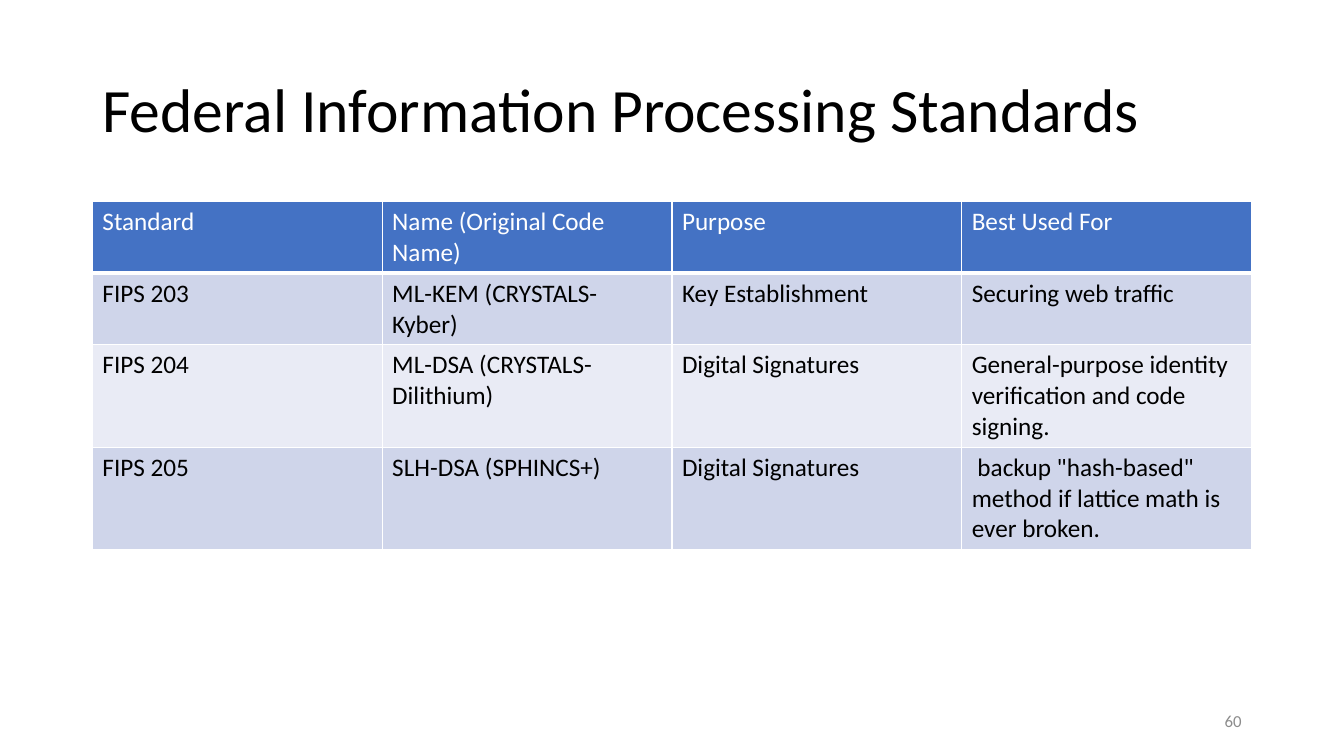
from lxml import etree
from pptx import Presentation
from pptx.dml.color import RGBColor
from pptx.enum.text import MSO_ANCHOR, MSO_AUTO_SIZE, PP_ALIGN
from pptx.oxml.ns import qn
from pptx.util import Pt

PX = 9525
WHITE = RGBColor(0xFF, 0xFF, 0xFF)
BLACK = RGBColor(0x00, 0x00, 0x00)
GRAY = RGBColor(0x8C, 0x8C, 0x8C)
HEADER_BLUE = RGBColor(0x44, 0x72, 0xC4)
BAND_DARK = RGBColor(0xCF, 0xD5, 0xEA)
BAND_LIGHT = RGBColor(0xE9, 0xEB, 0xF5)
LEFT, RIGHT = PP_ALIGN.LEFT, PP_ALIGN.RIGHT
MIDDLE, TOP = MSO_ANCHOR.MIDDLE, MSO_ANCHOR.TOP
NO_AUTOFIT = MSO_AUTO_SIZE.NONE

ROW_HEIGHT = 39
STANDARDS = [
    ["Standard", "Name (Original Code Name)", "Purpose", "Best Used For"],
    ["FIPS 203", "ML-KEM (CRYSTALS-Kyber)", "Key Establishment", "Securing web traffic"],
    ["FIPS 204", "ML-DSA (CRYSTALS-Dilithium)", "Digital Signatures",
     "General-purpose identity verification and code signing."],
    ["FIPS 205", "SLH-DSA (SPHINCS+)", "Digital Signatures",
     ' backup "hash-based" method if lattice math is ever broken.'],
]


def write_text(text_frame, text, size=18, color=BLACK, align=LEFT, anchor=TOP, line_spacing=1.0):
    text_frame.word_wrap = True
    text_frame.vertical_anchor = anchor
    paragraph = text_frame.paragraphs[0]
    paragraph.alignment = align
    paragraph.line_spacing = line_spacing
    run = paragraph.add_run()
    run.text = text
    run.font.name = "Calibri"
    run.font.size = Pt(size)
    run.font.bold = False
    run.font.color.rgb = color


def add_borders(cell, bottom_width):
    properties = cell._tc.get_or_add_tcPr()
    widths = {"a:lnL": 1, "a:lnR": 1, "a:lnT": 1, "a:lnB": bottom_width}
    for position, (tag, width) in enumerate(widths.items()):
        line = etree.Element(qn(tag), w=str(Pt(width)))
        fill = etree.SubElement(line, qn("a:solidFill"))
        etree.SubElement(fill, qn("a:srgbClr"), val=str(WHITE))
        properties.insert(position, line)


def place_title(slide, left, top, width, height):
    title = slide.shapes.title
    title.left, title.top = left * PX, top * PX
    title.width, title.height = width * PX, height * PX
    title.text_frame.auto_size = NO_AUTOFIT
    write_text(title.text_frame, "Federal Information Processing Standards",
               size=44, anchor=MIDDLE, line_spacing=0.9)


def add_standards_table(slide, left, top, width):
    row_count, column_count = len(STANDARDS), len(STANDARDS[0])
    table = slide.shapes.add_table(row_count, column_count, left * PX, top * PX,
                                   width * PX, row_count * ROW_HEIGHT * PX).table
    for row_index, row in enumerate(STANDARDS):
        is_header = row_index == 0
        band = BAND_DARK if row_index % 2 else BAND_LIGHT
        for column_index, text in enumerate(row):
            cell = table.cell(row_index, column_index)
            cell.fill.solid()
            cell.fill.fore_color.rgb = HEADER_BLUE if is_header else band
            write_text(cell.text_frame, text, color=WHITE if is_header else BLACK)
            add_borders(cell, bottom_width=3 if is_header else 1)


def add_slide_number(slide, left, top, width, height):
    box = slide.shapes.add_textbox(left * PX, top * PX, width * PX, height * PX)
    write_text(box.text_frame, "60", size=12, color=GRAY, align=RIGHT, anchor=MIDDLE)


def main():
    presentation = Presentation()
    presentation.slide_width, presentation.slide_height = 1280 * PX, 720 * PX
    slide = presentation.slides.add_slide(presentation.slide_layouts[5])
    slide.background.fill.solid()
    slide.background.fill.fore_color.rgb = WHITE
    place_title(slide, 88, 38, 1104, 139)
    add_standards_table(slide, 88, 192, 1104)
    add_slide_number(slide, 904, 667, 288, 38)
    presentation.save("out.pptx")


if __name__ == "__main__":
    main()
